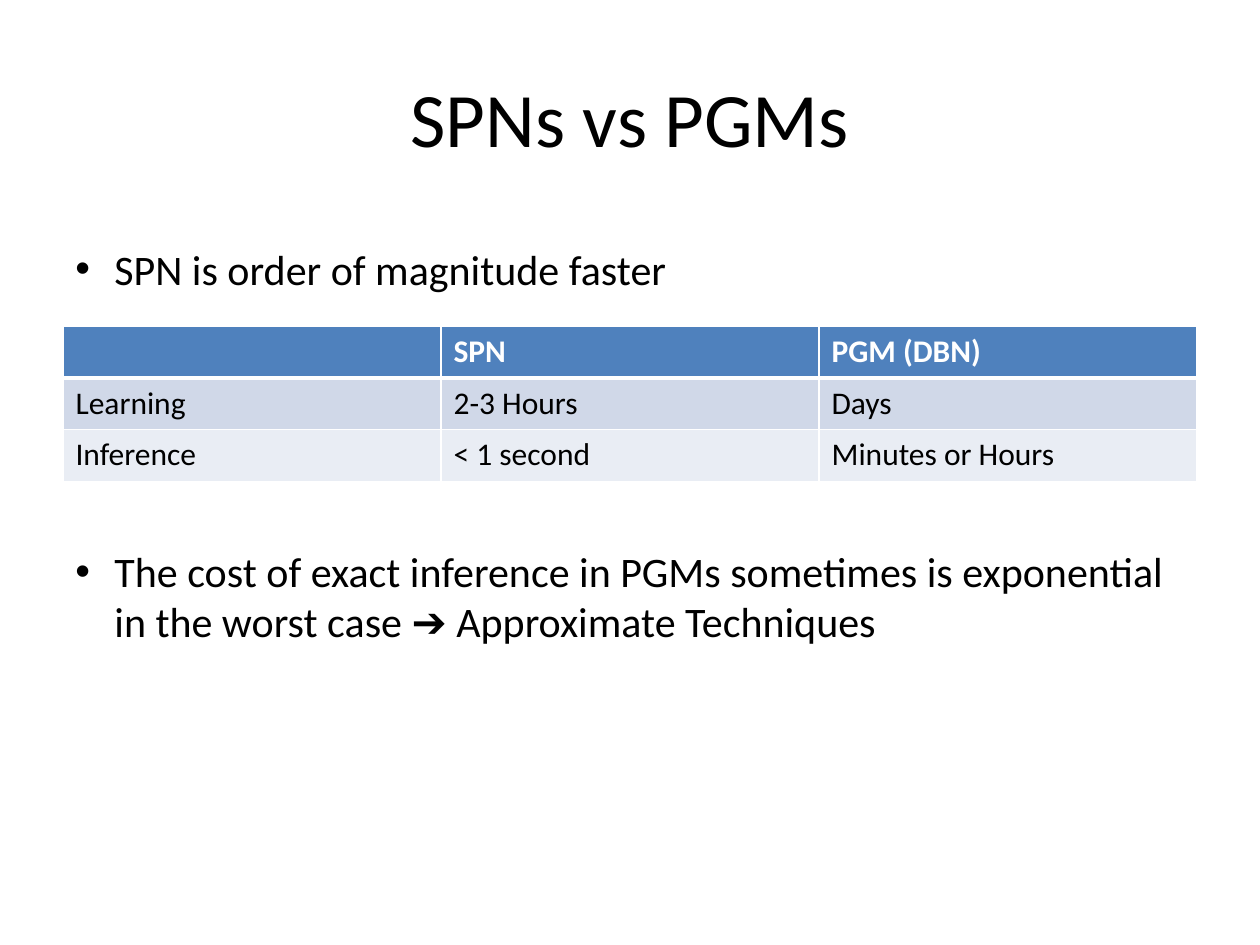
from dataclasses import dataclass

import pptx
import pptx.dml.color
import pptx.enum.text
import pptx.oxml
import pptx.oxml.ns
import pptx.util
from pptx.util import Inches

FONT = "Calibri"
COLORS = {
    "text": "000000",
    "white": "FFFFFF",
    "header": "4F81BD",
    "odd_row": "D0D8E8",
    "even_row": "E9EDF4",
}


@dataclass(frozen=True)
class TableRow:
    texts: tuple[str, ...]
    fill: str
    text_color: str = "text"
    bold: bool = False
    top_width: int = 1
    bottom_width: int = 1


@dataclass(frozen=True)
class Bullet:
    text: str
    space_before: int = 0


ROWS = (
    TableRow(("", "SPN", "PGM (DBN)"), "header", "white", bold=True, bottom_width=3),
    TableRow(("Learning", "2-3 Hours", "Days"), "odd_row", top_width=3),
    TableRow(("Inference", "< 1 second", "Minutes or Hours"), "even_row"),
)
BULLETS = (
    Bullet("SPN is order of magnitude faster"),
    Bullet(
        "The cost of exact inference in PGMs sometimes is exponential "
        "in the worst case ➔ Approximate Techniques",
        space_before=144,
    ),
)


def rgb(name: str) -> pptx.dml.color.RGBColor:
    return pptx.dml.color.RGBColor.from_string(COLORS[name])


def write_text(para, text: str, *, size: int, color: str = "text",
               bold: bool = False, align=pptx.enum.text.PP_ALIGN.LEFT) -> None:
    para.alignment = align
    span = para.add_run()
    span.text = text
    span.font.name = FONT
    span.font.size = pptx.util.Pt(size)
    span.font.bold = bold
    span.font.color.rgb = rgb(color)


def add_text_frame(slide, left: float, top: float, width: float, height: float):
    box = slide.shapes.add_textbox(
        Inches(left), Inches(top), Inches(width), Inches(height))
    box.text_frame.word_wrap = True
    return box.text_frame


def set_bullet(para, indent: float = 0.31) -> None:
    properties = para._p.get_or_add_pPr()
    properties.set("marL", str(Inches(indent)))
    properties.set("indent", str(Inches(-indent)))
    namespace = pptx.oxml.ns.nsdecls("a")
    for xml in (f'<a:buFont {namespace} typeface="Arial"/>',
                f'<a:buChar {namespace} char="•"/>'):
        properties.append(pptx.oxml.parse_xml(xml))


def set_borders(cell, row: TableRow) -> None:
    properties = cell._tc.get_or_add_tcPr()
    widths = {"L": 1, "R": 1, "T": row.top_width, "B": row.bottom_width}
    for side, width in widths.items():
        properties.append(pptx.oxml.parse_xml(
            f'<a:ln{side} {pptx.oxml.ns.nsdecls("a")} w="{pptx.util.Pt(width)}">'
            f'<a:solidFill><a:srgbClr val="{COLORS["white"]}"/></a:solidFill>'
            f'</a:ln{side}>'))


def add_title(slide, text: str) -> None:
    frame = add_text_frame(slide, 0.5, 0.3, 9, 1.25)
    frame.vertical_anchor = pptx.enum.text.MSO_ANCHOR.MIDDLE
    write_text(frame.paragraphs[0], text, size=44,
               align=pptx.enum.text.PP_ALIGN.CENTER)


def add_comparison_table(slide, rows: tuple[TableRow, ...]) -> None:
    row_height = Inches(0.41)
    table = slide.shapes.add_table(
        len(rows), len(rows[0].texts), Inches(0.5), Inches(2.59),
        Inches(9), row_height * len(rows)).table
    for table_row, row in zip(table.rows, rows):
        table_row.height = row_height
        for cell, text in zip(table_row.cells, row.texts):
            set_borders(cell, row)
            cell.fill.solid()
            cell.fill.fore_color.rgb = rgb(row.fill)
            if text:
                write_text(cell.text_frame.paragraphs[0], text, size=18,
                           color=row.text_color, bold=row.bold)


def add_bullets(slide, bullets: tuple[Bullet, ...]) -> None:
    frame = add_text_frame(slide, 0.5, 1.88, 9, 4.95)
    for index, bullet in enumerate(bullets):
        para = frame.add_paragraph() if index else frame.paragraphs[0]
        para.space_before = pptx.util.Pt(bullet.space_before)
        set_bullet(para)
        write_text(para, bullet.text, size=24)


def main() -> None:
    deck = pptx.Presentation()
    deck.slide_width = Inches(10)
    deck.slide_height = Inches(7.5)
    slide = deck.slides.add_slide(deck.slide_layouts[6])
    add_title(slide, "SPNs vs PGMs")
    add_comparison_table(slide, ROWS)
    add_bullets(slide, BULLETS)
    deck.save("out.pptx")


if __name__ == "__main__":
    main()
